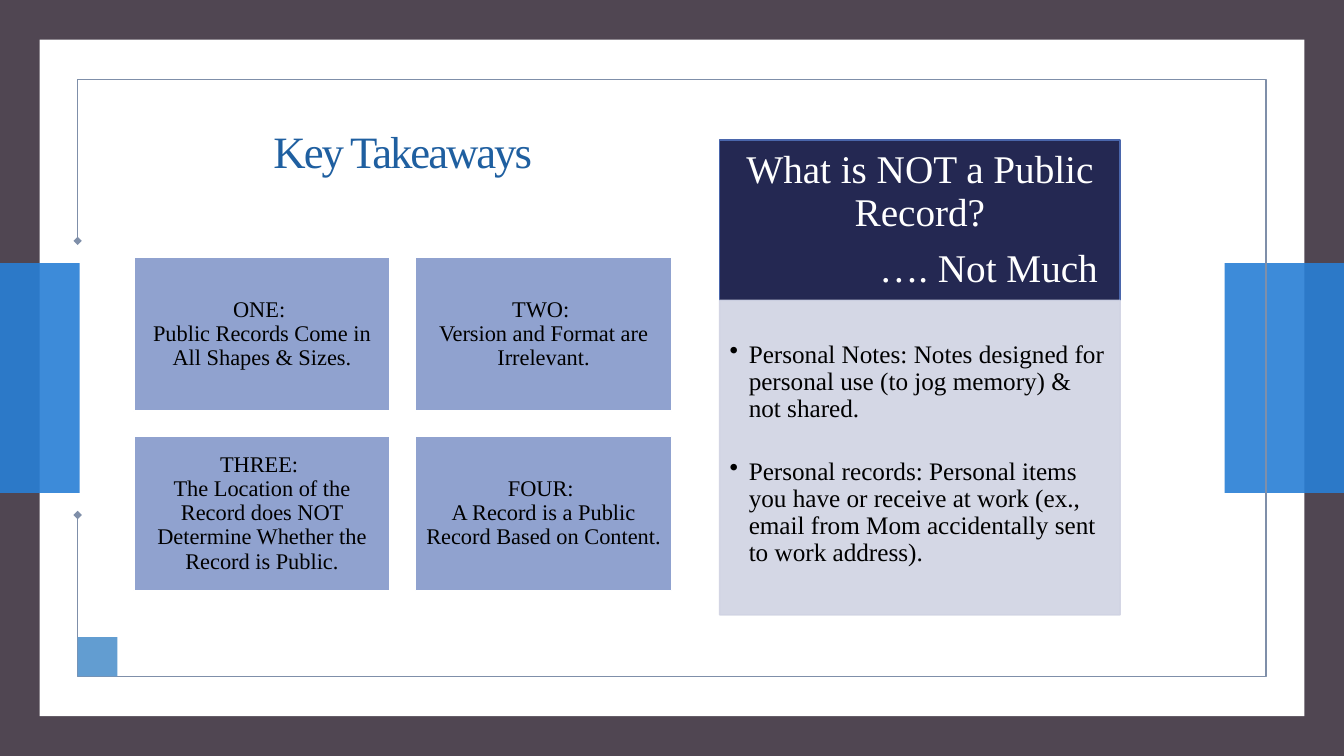
from copy import deepcopy
from dataclasses import dataclass
from itertools import product

from lxml.etree import SubElement
from pptx import Presentation
from pptx.dml.color import RGBColor
from pptx.enum.shapes import MSO_SHAPE
from pptx.enum.text import MSO_ANCHOR, MSO_AUTO_SIZE, PP_ALIGN
from pptx.oxml.ns import qn
from pptx.util import Inches, Pt

FONT = "Times New Roman"
SLIDE_WIDTH, SLIDE_HEIGHT = Inches(13.333), Inches(7.5)


@dataclass(frozen=True)
class Area:
    """A place on the slide, in percent of its width and height."""
    left: float
    top: float
    width: float
    height: float


@dataclass(frozen=True)
class Block:
    area: Area
    fill: str
    line: str | None = None
    opacity: int = 100


def across(percent: float) -> int:
    return round(SLIDE_WIDTH * percent / 100)


def down(percent: float) -> int:
    return round(SLIDE_HEIGHT * percent / 100)


def colour(value: str) -> RGBColor:
    return RGBColor.from_string(value)


def place(area: Area) -> tuple[int, int, int, int]:
    return across(area.left), down(area.top), across(area.width), down(area.height)


def set_opacity(fill_parent, percent: int) -> None:
    for colour_element in fill_parent.findall(f"{qn('a:solidFill')}/{qn('a:srgbClr')}"):
        SubElement(colour_element, qn("a:alpha"), val=str(percent * 1000))


def add_block(page, block: Block):
    box = page.shapes.add_shape(MSO_SHAPE.RECTANGLE, *place(block.area))
    box.shadow.inherit = False
    box.fill.solid()
    box.fill.fore_color.rgb = colour(block.fill)
    if block.line:
        box.line.color.rgb = colour(block.line)
        box.line.width = Pt(1)
    else:
        box.line.fill.background()
    if block.opacity < 100:
        set_opacity(box._element.spPr, block.opacity)
        if block.line:
            set_opacity(box.line._ln, block.opacity)
    return box


def set_frame(box, insets: tuple[float, float, float, float], anchor=MSO_ANCHOR.MIDDLE):
    """Set wrapping, anchor and insets (left, top, right, bottom, in points)."""
    frame = box.text_frame
    frame.word_wrap = True
    frame.auto_size = MSO_AUTO_SIZE.NONE
    frame.vertical_anchor = anchor
    (frame.margin_left, frame.margin_top,
     frame.margin_right, frame.margin_bottom) = map(Pt, insets)
    return frame


def write(para, text: str, *, size: float, ink: str = "000000", align=PP_ALIGN.CENTER,
          after: float = 0, tracking: float = 0, bullet: bool = False) -> None:
    """Fill a paragraph; a vertical tab in the text becomes a line break."""
    para.text = text
    para.alignment = align
    para.line_spacing = 0.9
    para.space_before = Pt(0)
    para.space_after = Pt(after)
    for span in para.runs:
        span.font.name = FONT
        span.font.size = Pt(size)
        span.font.color.rgb = colour(ink)
        if tracking:
            span.font._element.set("spc", str(round(tracking * 100)))
    for line_break in para._p.findall(qn("a:br")):
        line_break.append(deepcopy(para.runs[0].font._element))
    if bullet:
        properties = para._p.get_or_add_pPr()
        indent = Inches(0.19)
        properties.set("marL", str(indent))
        properties.set("indent", str(-indent))
        SubElement(properties, qn("a:buChar"), char="•")


def add_border(page) -> None:
    """Draw the thin frame, open at the left, with diamond ends."""
    left, right, top, bottom = 5.78, 94.2, 10.53, 89.47
    corners = [(left, top), (right, top), (right, bottom), (left, bottom), (left, 68.13)]
    builder = page.shapes.build_freeform(across(left), down(31.87))
    builder.add_line_segments([(across(x), down(y)) for x, y in corners], close=False)
    border = builder.convert_to_shape()
    border.shadow.inherit = False
    border.fill.background()
    border.line.color.rgb = colour("7F8FA9")
    border.line.width = Pt(1)
    for end in ("a:headEnd", "a:tailEnd"):
        SubElement(border.line._ln, qn(end), type="diamond")


def add_title(page) -> None:
    title = page.shapes.title
    title.left, title.top, title.width, title.height = place(Area(13.5, 14, 32.93, 19.47))
    frame = set_frame(title, (7.2, 17, 7.2, 3.6), MSO_ANCHOR.TOP)
    write(frame.paragraphs[0], "Key Takeaways", size=32, ink="1F5FA0", tracking=-1.5)


def add_takeaways(page) -> None:
    takeaways = [
        "ONE: \vPublic Records Come in All Shapes & Sizes.",
        "TWO: \vVersion and Format are Irrelevant.",
        "THREE: \vThe Location of the Record does NOT Determine Whether the Record is Public.",
        "FOUR: \vA Record is a Public Record Based on Content.",
    ]
    for (row, column), text in zip(product(range(2), repeat=2), takeaways):
        area = Area(9.97 + 20.95 * column, 34 + 23.73 * row, 19.05, 20.4)
        card = add_block(page, Block(area, "90A2CF", "FFFFFF"))
        write(set_frame(card, (5, 5, 5, 5)).paragraphs[0], text, size=16)


def add_exceptions(page) -> None:
    header = add_block(page, Block(Area(53.55, 18.53, 29.8, 21.2), "242852", "4A66AC"))
    frame = set_frame(header, (16, 8.5, 16, 8.5))
    write(frame.paragraphs[0], "What is NOT a Public Record?",
          size=28, ink="FFFFFF", after=9.8)
    write(frame.add_paragraph(), "…. Not Much",
          size=28, ink="FFFFFF", align=PP_ALIGN.RIGHT)

    body = add_block(page, Block(Area(53.55, 39.73, 29.8, 41.6), "D0D3E3", "D0D3E3", 90))
    frame = set_frame(body, (7.2, 29.5, 10, 11.5), MSO_ANCHOR.TOP)
    write(frame.paragraphs[0],
          "Personal Notes: Notes designed for personal use (to jog memory) & not shared.",
          size=18, align=PP_ALIGN.LEFT, after=25, bullet=True)
    write(frame.add_paragraph(),
          "Personal records: Personal items you have or receive at work "
          "(ex., email from Mom accidentally sent to work address).",
          size=18, align=PP_ALIGN.LEFT, bullet=True)


def main() -> None:
    deck = Presentation()
    deck.slide_width, deck.slide_height = SLIDE_WIDTH, SLIDE_HEIGHT
    page = deck.slides.add_slide(deck.slide_layouts.get_by_name("Title Only"))
    page.background.fill.solid()
    page.background.fill.fore_color.rgb = colour("504652")

    panel = Block(Area(2.95, 5.25, 94.1, 89.5), "FFFFFF")
    left_bar = Block(Area(0, 34.8, 5.92, 30.4), "297FD5", opacity=90)
    right_bar = Block(Area(91.13, 34.8, 8.87, 30.4), "297FD5", opacity=90)
    for block in (panel, left_bar, right_bar):
        add_block(page, block)
    add_border(page)
    add_block(page, Block(Area(5.78, 84.27, 2.95, 5.2), "629DD1"))

    title_element = page.shapes.title._element
    title_element.getparent().append(title_element)
    add_title(page)
    add_takeaways(page)
    add_exceptions(page)
    deck.save("out.pptx")


if __name__ == "__main__":
    main()
